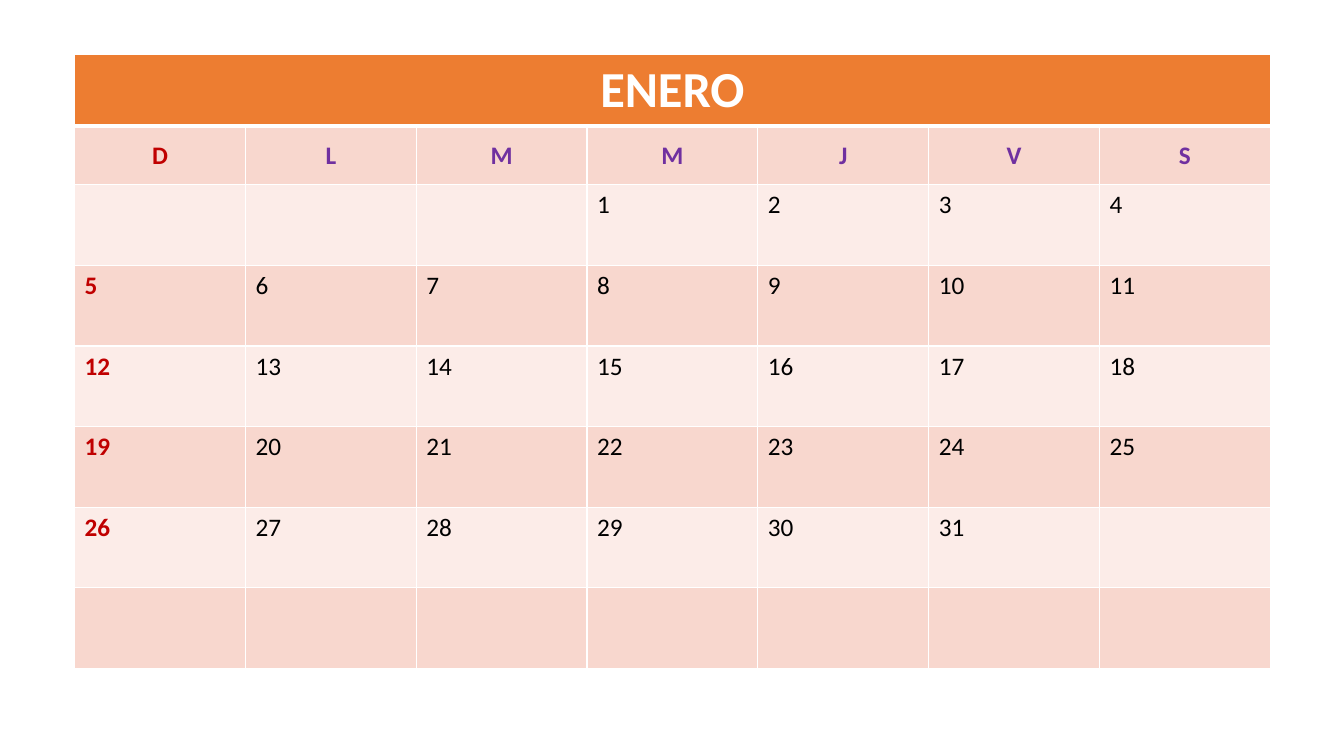
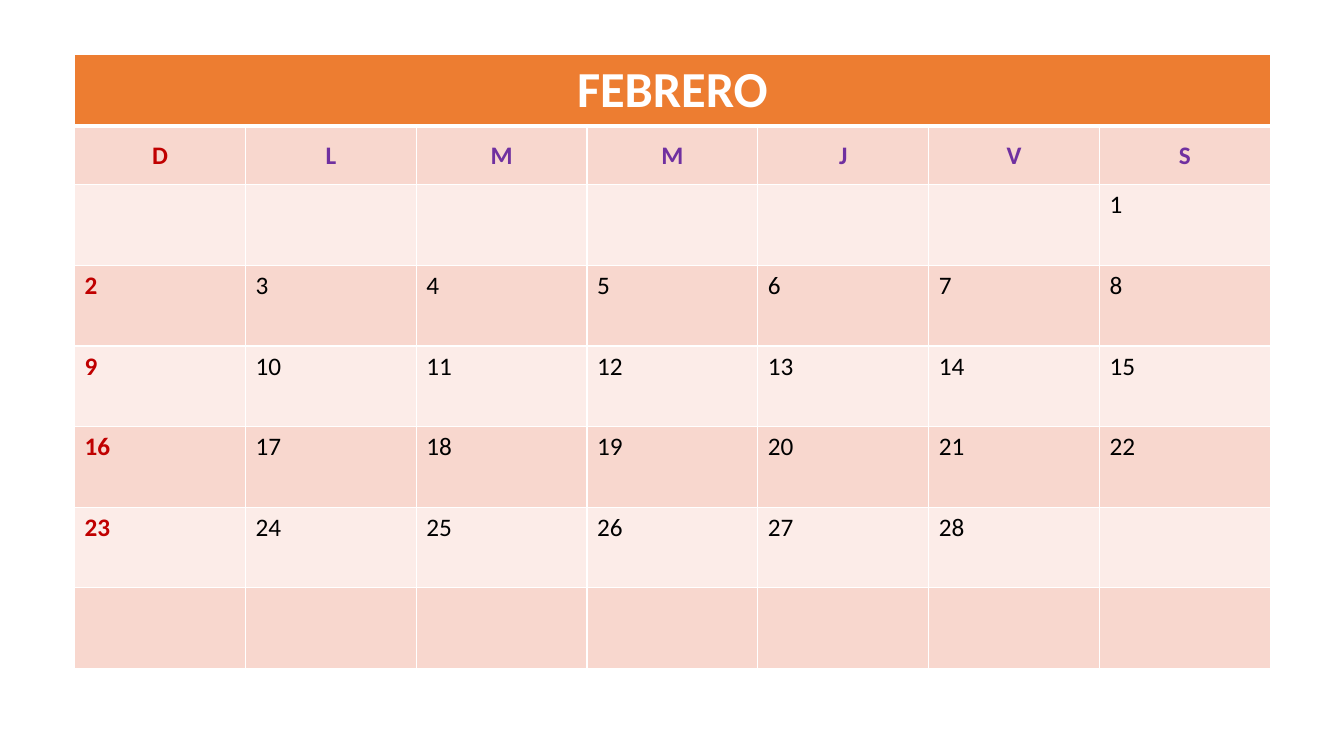
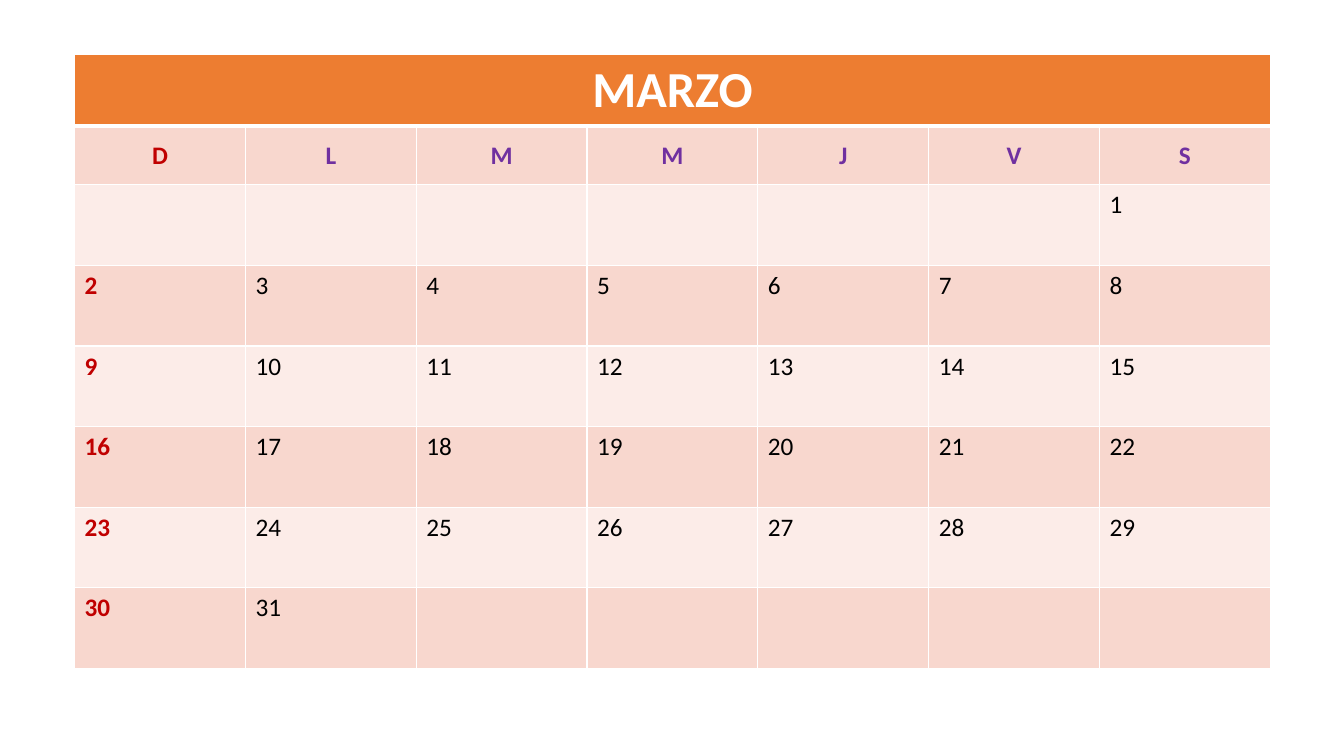
import pptx
import pptx.dml.color
import pptx.enum.text
import pptx.oxml
import pptx.oxml.ns
import pptx.util


class Theme:
    face = "Calibri"
    white, black = "FFFFFF", "000000"
    band, dark, light = "ED7D31", "F8D7CE", "FCECE8"
    red, purple = "C00000", "7030A0"
    large, small = 36, 18
    thin, thick = 1, 3


Inches = pptx.util.Inches
Pt = pptx.util.Pt
Color = pptx.dml.color.RGBColor.from_string
Align = pptx.enum.text.PP_ALIGN
Anchor = pptx.enum.text.MSO_ANCHOR

LEFT, TOP = 0.74, 0.54
COLS, WEEKS = 7, 6
HEIGHTS = [0.69, 0.58] + [0.8] * WEEKS
WIDTH = 11.86
DAYS = "DLMMJVS"
# name, column of the first day, number of days
MONTHS = [("ENERO", 3, 31), ("FEBRERO", 6, 28), ("MARZO", 6, 31)]


def dress(cell, fill, top, base):
    """Give a cell its fill and white borders, top and base in points."""
    props = cell._tc.get_or_add_tcPr()
    sides = {"L": Theme.thin, "R": Theme.thin, "T": top, "B": base}
    for side, width in sides.items():
        props.append(pptx.oxml.parse_xml(
            f'<a:ln{side} {pptx.oxml.ns.nsdecls("a")} w="{Pt(width)}"><a:solidFill>'
            f'<a:srgbClr val="{Theme.white}"/></a:solidFill></a:ln{side}>'))
    cell.fill.solid()
    cell.fill.fore_color.rgb = Color(fill)


def write(cell, text, size, color, bold, center):
    para = cell.text_frame.paragraphs[0]
    if center:
        para.alignment = Align.CENTER
        cell.vertical_anchor = Anchor.MIDDLE
    run = para.add_run()
    run.text = text
    run.font.name = Theme.face
    run.font.size = Pt(size)
    run.font.bold = bold
    run.font.color.rgb = Color(color)


deck = pptx.Presentation()
deck.slide_width, deck.slide_height = Inches(13.33), Inches(7.5)

for name, start, count in MONTHS:
    slide = deck.slides.add_slide(deck.slide_layouts[6])
    grid = slide.shapes.add_table(
        len(HEIGHTS), COLS, Inches(LEFT), Inches(TOP),
        Inches(WIDTH), Inches(sum(HEIGHTS))).table
    for row, height in zip(grid.rows, HEIGHTS):
        row.height = Inches(height)
    for col in grid.columns:
        col.width = Inches(WIDTH / COLS)

    for r in range(len(HEIGHTS)):
        fill = Theme.band if r == 0 else Theme.dark if r % 2 else Theme.light
        top = Theme.thick if r == 1 else Theme.thin
        base = Theme.thick if r == 0 else Theme.thin
        for c in range(COLS):
            dress(grid.cell(r, c), fill, top, base)

    grid.cell(0, 0).merge(grid.cell(0, COLS - 1))
    write(grid.cell(0, 0), name, Theme.large, Theme.white, True, True)
    for c, day in enumerate(DAYS):
        color = Theme.purple if c else Theme.red
        write(grid.cell(1, c), day, Theme.small, color, True, True)
    for day in range(1, count + 1):
        week, c = divmod(start + day - 1, COLS)
        color = Theme.black if c else Theme.red
        write(grid.cell(week + 2, c), str(day), Theme.small, color, c == 0, False)

deck.save("out.pptx")
